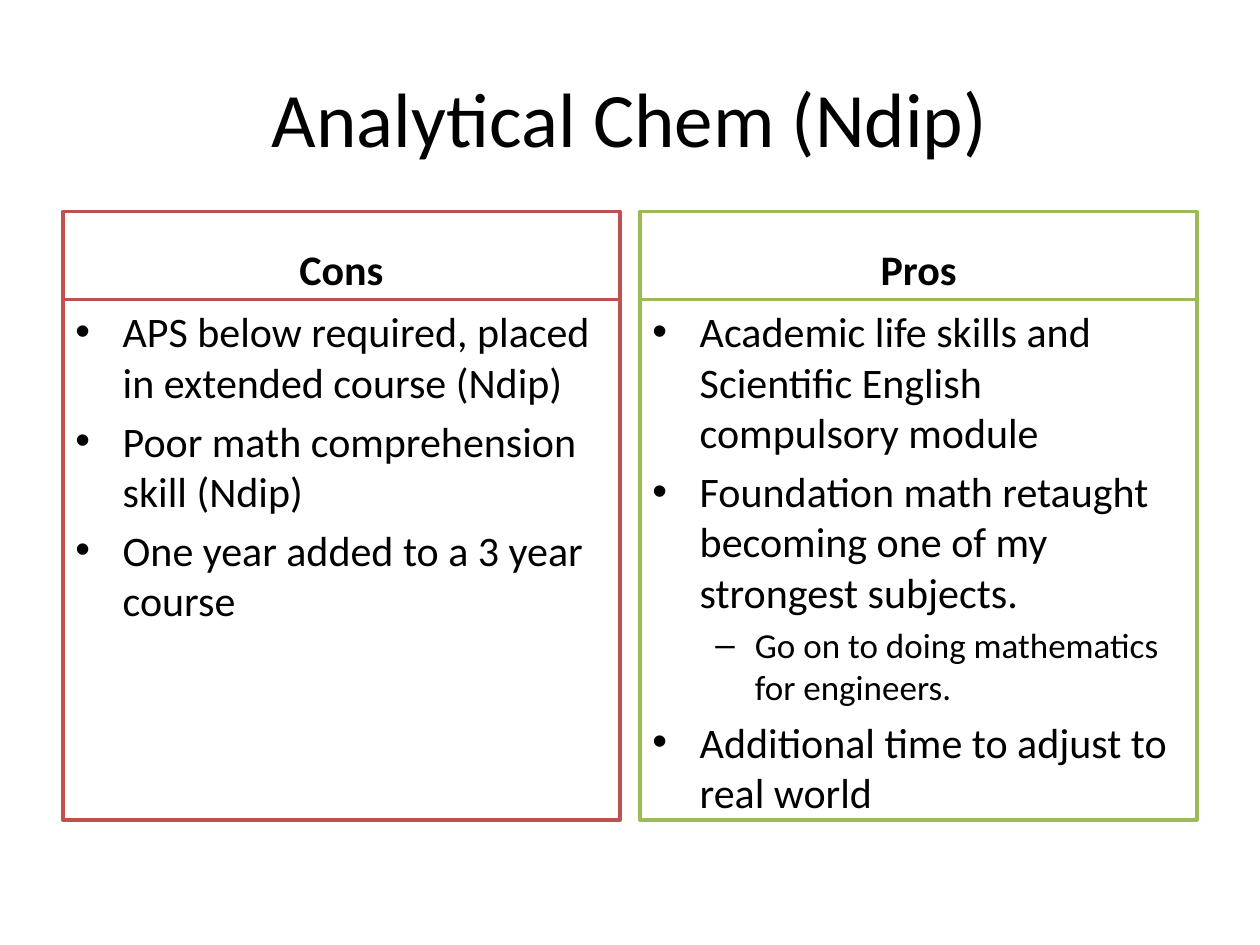
from dataclasses import dataclass

from lxml import etree
from pptx import Presentation
from pptx.dml.color import RGBColor
from pptx.enum.shapes import MSO_SHAPE
from pptx.enum.text import MSO_ANCHOR, PP_ALIGN
from pptx.oxml.ns import qn
from pptx.util import Pt

RECT = MSO_SHAPE.RECTANGLE
TOP, MIDDLE, BOTTOM = MSO_ANCHOR.TOP, MSO_ANCHOR.MIDDLE, MSO_ANCHOR.BOTTOM
LEFT, CENTER = PP_ALIGN.LEFT, PP_ALIGN.CENTER

BLACK, WHITE, RED, GREEN = "000000", "FFFFFF", "C0504D", "9BBB59"
WIDE, HIGH = 720, 540
EDGE, GAP = 36, 11.5
COL = (WIDE - 2 * EDGE - GAP) / 2
HEAD_TOP, HEAD_HIGH, BODY_HIGH = 120.88, 50.38, 297.25


@dataclass
class Level:
    size: float
    left: float
    hang: float
    mark: str


@dataclass
class Item:
    text: str
    level: int = 0


@dataclass
class Panel:
    head: str
    color: str
    items: list[Item]


LEVELS = [Level(24, 27, 27, "•"), Level(20, 58.5, 22.5, "–")]
PANELS = [
    Panel("Cons", RED, [
        Item("APS below required, placed in extended course (Ndip)"),
        Item("Poor math comprehension skill (Ndip)"),
        Item("One year added to a 3 year course"),
    ]),
    Panel("Pros", GREEN, [
        Item("Academic life skills and Scientific English compulsory module"),
        Item("Foundation math retaught becoming one of my strongest subjects."),
        Item("Go on to doing mathematics for engineers.", 1),
        Item("Additional time to adjust to real world"),
    ]),
]


def paint(value: str) -> RGBColor:
    return RGBColor.from_string(value)


def style(font, size: float, bold: bool = False) -> None:
    values = {"name": "Calibri", "size": Pt(size), "bold": bold}
    for key, value in values.items():
        setattr(font, key, value)
    font.color.rgb = paint(BLACK)


def add_box(slide, x: float, y: float, high: float, color: str, anchor):
    box = slide.shapes.add_shape(RECT, Pt(x), Pt(y), Pt(COL), Pt(high))
    box.shadow.inherit = False
    box.fill.solid()
    box.fill.fore_color.rgb = paint(WHITE)
    box.line.color.rgb = paint(color)
    box.line.width = Pt(2)
    frame = box.text_frame
    frame.word_wrap = True
    frame.vertical_anchor = anchor
    return frame


def add_line(frame, text: str, size: float, bold: bool = False) -> None:
    """Fill the first paragraph with one centred line."""
    para = frame.paragraphs[0]
    para.text = text
    para.alignment = CENTER
    style(para.runs[0].font, size, bold)


def add_mark(para, level: Level) -> None:
    """Give the paragraph a bullet with a hanging indent."""
    props = para._p.get_or_add_pPr()
    props.set("marL", str(Pt(level.left)))
    props.set("indent", str(-Pt(level.hang)))
    etree.SubElement(props, qn("a:buFont")).set("typeface", "Arial")
    etree.SubElement(props, qn("a:buChar")).set("char", level.mark)


def add_list(frame, items: list[Item]) -> None:
    for i, item in enumerate(items):
        level = LEVELS[item.level]
        para = frame.add_paragraph() if i else frame.paragraphs[0]
        para.text = item.text
        para.level = item.level
        para.alignment = LEFT
        para.space_before = Pt(0.2 * level.size if i else 0)
        add_mark(para, level)
        style(para.runs[0].font, level.size)


def add_panel(slide, x: float, panel: Panel) -> None:
    head = add_box(slide, x, HEAD_TOP, HEAD_HIGH, panel.color, BOTTOM)
    add_line(head, panel.head, 24, True)
    body = add_box(slide, x, HEAD_TOP + HEAD_HIGH, BODY_HIGH, panel.color, TOP)
    add_list(body, panel.items)


def add_title(slide, text: str) -> None:
    box = slide.shapes.add_textbox(Pt(EDGE), Pt(21.6), Pt(WIDE - 2 * EDGE), Pt(90))
    frame = box.text_frame
    frame.word_wrap = True
    frame.vertical_anchor = MIDDLE
    add_line(frame, text, 44)


def main() -> None:
    deck = Presentation()
    deck.slide_width, deck.slide_height = Pt(WIDE), Pt(HIGH)
    slide = deck.slides.add_slide(deck.slide_layouts[6])
    add_title(slide, "Analytical Chem (Ndip)")
    for i, panel in enumerate(PANELS):
        add_panel(slide, EDGE + i * (COL + GAP), panel)
    deck.save("out.pptx")


if __name__ == "__main__":
    main()
